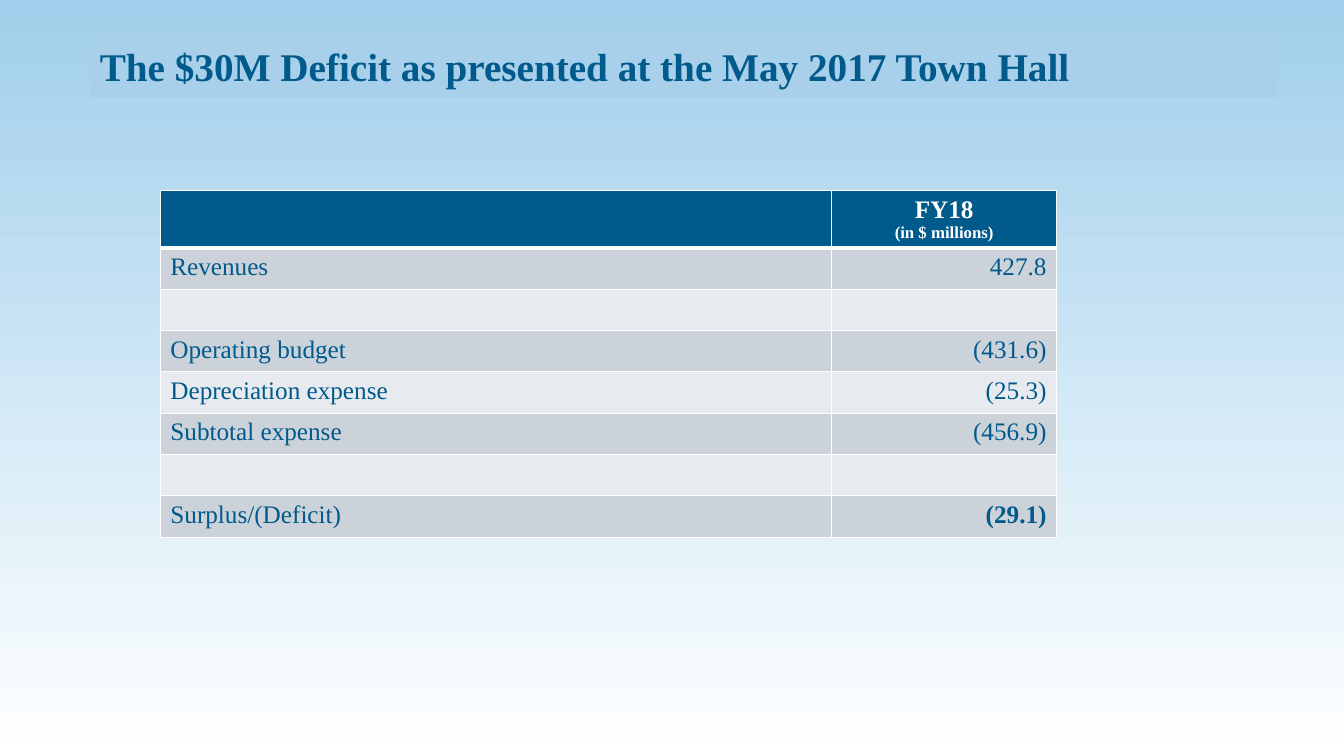
from lxml import etree
from pptx import Presentation
from pptx.dml.color import RGBColor
from pptx.enum.text import MSO_ANCHOR, PP_ALIGN
from pptx.oxml.ns import qn
from pptx.util import Inches, Pt

LEFT, CENTER, RIGHT = PP_ALIGN.LEFT, PP_ALIGN.CENTER, PP_ALIGN.RIGHT
MIDDLE = MSO_ANCHOR.MIDDLE
TITLE_ONLY = 5
FONT = "Times New Roman"
COLORS = {
    "sky": "A0CFEB",
    "white": "FFFFFF",
    "title_band": "A9D0EA",
    "navy": "005A8B",
    "dark_row": "CCD2DA",
    "light_row": "E7EAEE",
}
BUDGET_ROWS = [
    ("Revenues", "427.8"),
    ("", ""),
    ("Operating budget", "(431.6)"),
    ("Depreciation expense", "(25.3)"),
    ("Subtotal expense", "(456.9)"),
    ("", ""),
    ("Surplus/(Deficit)", "(29.1)"),
]


def color(name):
    return RGBColor.from_string(COLORS[name])


def style_paragraph(paragraph, size, color_name, bold, alignment):
    paragraph.alignment = alignment
    for run in paragraph.runs:
        run.font.name = FONT
        run.font.size = Pt(size)
        run.font.bold = bold
        run.font.color.rgb = color(color_name)


def add_background(slide):
    fill = slide.background.fill
    fill.gradient()
    fill.gradient_angle = 270
    for stop, name in zip(fill.gradient_stops, ("sky", "white")):
        stop.color.rgb = color(name)


def add_title(slide, left, top, width, height):
    title = slide.shapes.title
    title.left, title.top = Inches(left), Inches(top)
    title.width, title.height = Inches(width), Inches(height)
    title.fill.solid()
    title.fill.fore_color.rgb = color("title_band")
    text_frame = title.text_frame
    text_frame.text = "The $30M Deficit as presented at the May 2017 Town Hall"
    text_frame.vertical_anchor = MIDDLE
    style_paragraph(text_frame.paragraphs[0], 28, "navy", True, LEFT)


def style_cell(cell, fill_name, top_width, bottom_width):
    properties = cell._tc.get_or_add_tcPr()
    widths = {"lnL": 1, "lnR": 1, "lnT": top_width, "lnB": bottom_width}
    for side, width in widths.items():
        line = etree.SubElement(properties, qn(f"a:{side}"), w=str(Pt(width)))
        solid = etree.SubElement(line, qn("a:solidFill"))
        etree.SubElement(solid, qn("a:srgbClr"), val=COLORS["white"])
    cell.fill.solid()
    cell.fill.fore_color.rgb = color(fill_name)


def add_budget_table(slide, left, top, width, height):
    row_count = len(BUDGET_ROWS) + 1
    frame = slide.shapes.add_table(
        row_count, 2, Inches(left), Inches(top), Inches(width), Inches(height)
    )
    table = frame.table
    value_width, row_height = 2.23, 0.41
    table.columns[0].width = Inches(width - value_width)
    table.columns[1].width = Inches(value_width)
    table.rows[0].height = Inches(height - row_height * len(BUDGET_ROWS))

    for cell in table.rows[0].cells:
        style_cell(cell, "navy", 1, 3)
    header = table.cell(0, 1).text_frame
    header.text = "FY18\n(in $ millions)"
    for paragraph, size in zip(header.paragraphs, (18, 12)):
        style_paragraph(paragraph, size, "white", True, CENTER)

    for index, texts in enumerate(BUDGET_ROWS, start=1):
        table.rows[index].height = Inches(row_height)
        fill_name = "dark_row" if index % 2 else "light_row"
        for column, text in enumerate(texts):
            cell = table.cell(index, column)
            style_cell(cell, fill_name, 3 if index == 1 else 1, 1)
            cell.text_frame.text = text
            bold = column == 1 and index == len(BUDGET_ROWS)
            alignment = RIGHT if column else LEFT
            style_paragraph(cell.text_frame.paragraphs[0], 18, "navy", bold, alignment)


def main():
    presentation = Presentation()
    presentation.slide_width = Inches(13.33)
    presentation.slide_height = Inches(7.5)
    slide = presentation.slides.add_slide(presentation.slide_layouts[TITLE_ONLY])
    add_background(slide)
    add_title(slide, 0.89, 0.33, 11.78, 0.64)
    add_budget_table(slide, 1.59, 1.89, 8.89, 3.44)
    presentation.save("out.pptx")


if __name__ == "__main__":
    main()
